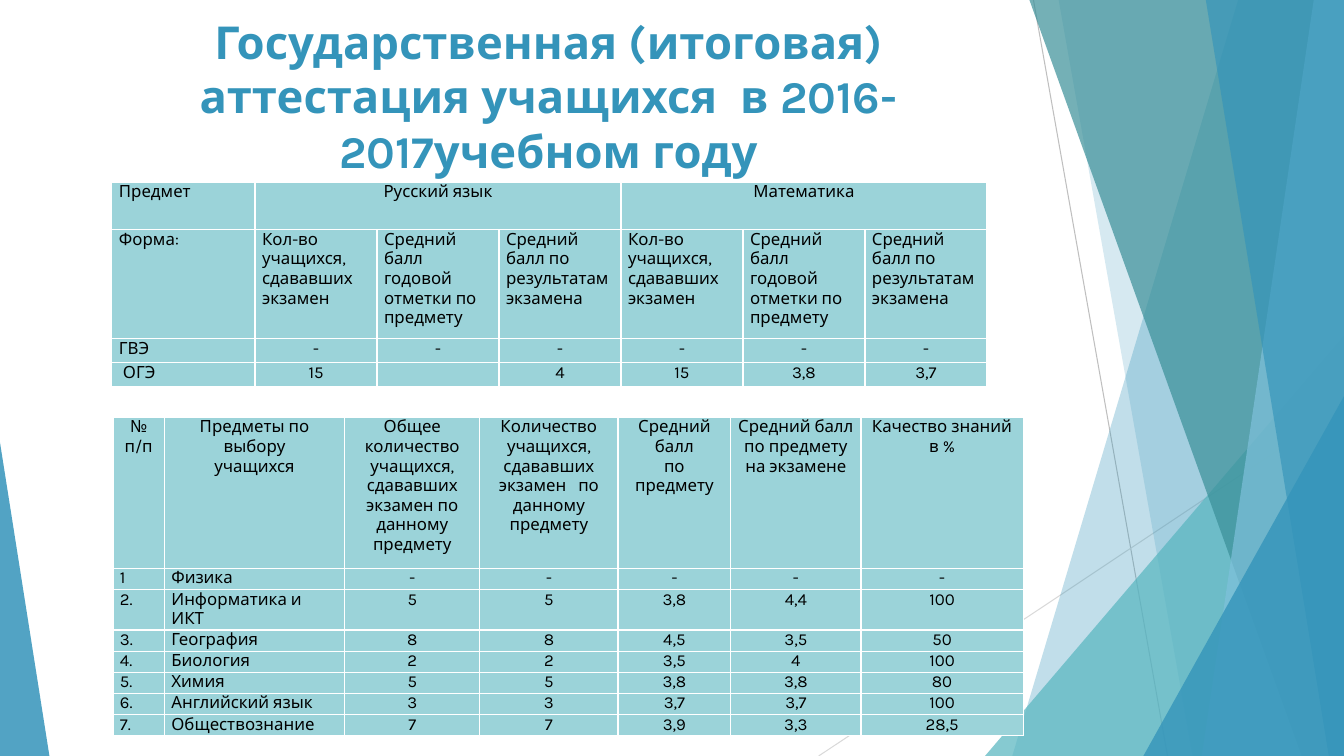
from lxml import etree
from pptx import Presentation, util as u
from pptx.dml.color import RGBColor
from pptx.enum import shapes, text
from pptx.oxml.ns import qn

WIDE, HIGH = 13.33, 7.5
FONT, BLUE, TEAL = "Karla", "3494BA", "9BD3D9"
TITLE = "Государственная (итоговая) аттестация учащихся  в 2016-2017учебном году"

PANELS = [
    (12.28, 10.04, BLUE, 30),
    (10.5, 11.83, BLUE, 20),
    (10.21, 12.91, "3A8F98", 70),
    (13.03, 11.92, "7FC1DB", 70),
    (11.96, 13.18, BLUE, 65),
]

COUNT = "Кол-во учащихся, сдававших экзамен"
YEAR = "Средний балл\nгодовой отметки по предмету"
EXAM = "Средний балл по результатам экзамена"
FORMS = [
    ["Предмет", "Русский язык", "", "", "Математика", "", ""],
    ["Форма:"] + [COUNT, YEAR, EXAM] * 2,
    ["ГВЭ"] + ["-"] * 6,
    ["ОГЭ", "15", "", "4", "15", "3,8", "3,7"],
]

MARKS = [
    ["№ п/п", "Предметы по выбору\nучащихся",
     "Общее количество\nучащихся, сдававших экзамен по данному предмету",
     "Количество\nучащихся, сдававших экзамен   по данному предмету",
     "Средний балл\nпо предмету", "Средний балл\nпо предмету\nна экзамене",
     "Качество знаний\nв %"],
    ["1", "Физика"] + ["-"] * 5,
    ["2.", "Информатика и ИКТ", "5", "5", "3,8", "4,4", "100"],
    ["3.", "География", "8", "8", "4,5", "3,5", "50"],
    ["4.", "Биология", "2", "2", "3,5", "4", "100"],
    ["5.", "Химия", "5", "5", "3,8", "3,8", "80"],
    ["6.", "Английский язык", "3", "3", "3,7", "3,7", "100"],
    ["7.", "Обществознание", "7", "7", "3,9", "3,3", "28,5"],
]


def color(code):
    return RGBColor.from_string(code)


def paint(shape, code, alpha):
    shape.shadow.inherit = False
    shape.line.fill.background()
    shape.fill.solid()
    shape.fill.fore_color.rgb = color(code)
    tone = shape.fill._xPr.find(".//" + qn("a:srgbClr"))
    etree.SubElement(tone, qn("a:alpha"), val=str(alpha * 1000))


def add_line(slide, start, end, code):
    ends = [u.Inches(v) for v in start + end]
    line = slide.shapes.add_connector(shapes.MSO_CONNECTOR.STRAIGHT, *ends)
    line.line.color.rgb = color(code)
    line.line.width = u.Pt(0.75)
    etree.SubElement(line._element.spPr, qn("a:effectLst"))


def add_panel(slide, top, bottom, code, alpha):
    spots = [(top, 0), (WIDE, 0), (WIDE, HIGH), (bottom, HIGH)]
    spots = [(u.Inches(x), u.Inches(y)) for x, y in spots]
    path = slide.shapes.build_freeform(*spots[0])
    path.add_line_segments(spots[1:], close=True)
    paint(path.convert_to_shape(), code, alpha)


def add_wedge(slide, box, tip, code, alpha):
    kind = shapes.MSO_SHAPE.ISOSCELES_TRIANGLE
    wedge = slide.shapes.add_shape(kind, *[u.Inches(v) for v in box])
    wedge.adjustments[0] = tip
    paint(wedge, code, alpha)


def write(frame, words, size, code, align, bold=False):
    frame.word_wrap = True
    frame.text = words
    for par in frame.paragraphs:
        par.alignment = align
        par.font.name = FONT
        par.font.size = u.Pt(size)
        par.font.bold = bold
        par.font.color.rgb = color(code)


def add_title(slide):
    box = slide.shapes.add_textbox(*[u.Inches(v) for v in (0.74, 0.09, 9.4, 1.44)])
    write(box.text_frame, TITLE, 32.4, BLUE, text.PP_ALIGN.CENTER, True)


def style(cell, words, align):
    cell.margin_left = cell.margin_right = u.Inches(0.07)
    cell.margin_top = cell.margin_bottom = 0
    props = cell._tc.get_or_add_tcPr()
    for side in ("lnL", "lnR", "lnT", "lnB"):
        edge = etree.SubElement(props, qn("a:" + side), w=str(u.Pt(1)))
        fill = etree.SubElement(edge, qn("a:solidFill"))
        etree.SubElement(fill, qn("a:srgbClr"), val="FFFFFF")
    cell.fill.solid()
    cell.fill.fore_color.rgb = color(TEAL)
    write(cell.text_frame, words, 12, "000000", align)


def add_grid(slide, left, top, cols, rows, data, is_left):
    box = [u.Inches(v) for v in (left, top, sum(cols), sum(rows))]
    grid = slide.shapes.add_table(len(rows), len(cols), *box).table
    grid.first_row = grid.horz_banding = False
    for col, width in zip(grid.columns, cols):
        col.width = u.Inches(width)
    for row, height in zip(grid.rows, rows):
        row.height = u.Inches(height)
    for r, line in enumerate(data):
        for c, words in enumerate(line):
            side = text.PP_ALIGN.LEFT if is_left(r, c) else text.PP_ALIGN.CENTER
            style(grid.cell(r, c), words, side)
    return grid


def main():
    deck = Presentation()
    deck.slide_width, deck.slide_height = u.Inches(WIDE), u.Inches(HIGH)
    slide = deck.slides.add_slide(deck.slide_layouts[6])

    add_line(slide, (10.25, 0), (11.58, HIGH), "BFBFBF")
    add_line(slide, (WIDE, 4.03), (8.12, HIGH), "D9D9D9")
    for panel in PANELS[:2]:
        add_panel(slide, *panel)
    add_wedge(slide, (9.77, 3.33, 3.56, 4.17), 1, "58B6C0", 72)
    for panel in PANELS[2:]:
        add_panel(slide, *panel)
    add_wedge(slide, (11.34, 3.93, 1.99, 3.57), 1, BLUE, 80)
    add_wedge(slide, (0, 4.39, 0.49, 3.11), 0, BLUE, 85)

    add_title(slide)
    forms = add_grid(slide, 1.11, 1.81, [1.42] + [1.21] * 6,
                     [0.47, 1.08, 0.24, 0.24], FORMS,
                     lambda r, c: c == 0 or r == 1)
    for c in (1, 4):
        forms.cell(0, c).merge(forms.cell(0, c + 2))
    forms.cell(3, 0).margin_left = u.Inches(0.11)
    add_grid(slide, 1.12, 4.14, [0.51, 1.79, 1.34, 1.37, 1.12, 1.29, 1.61],
             [1.5] + [0.21] * 7, MARKS, lambda r, c: r > 0 and c < 2)
    deck.save("out.pptx")


if __name__ == "__main__":
    main()
